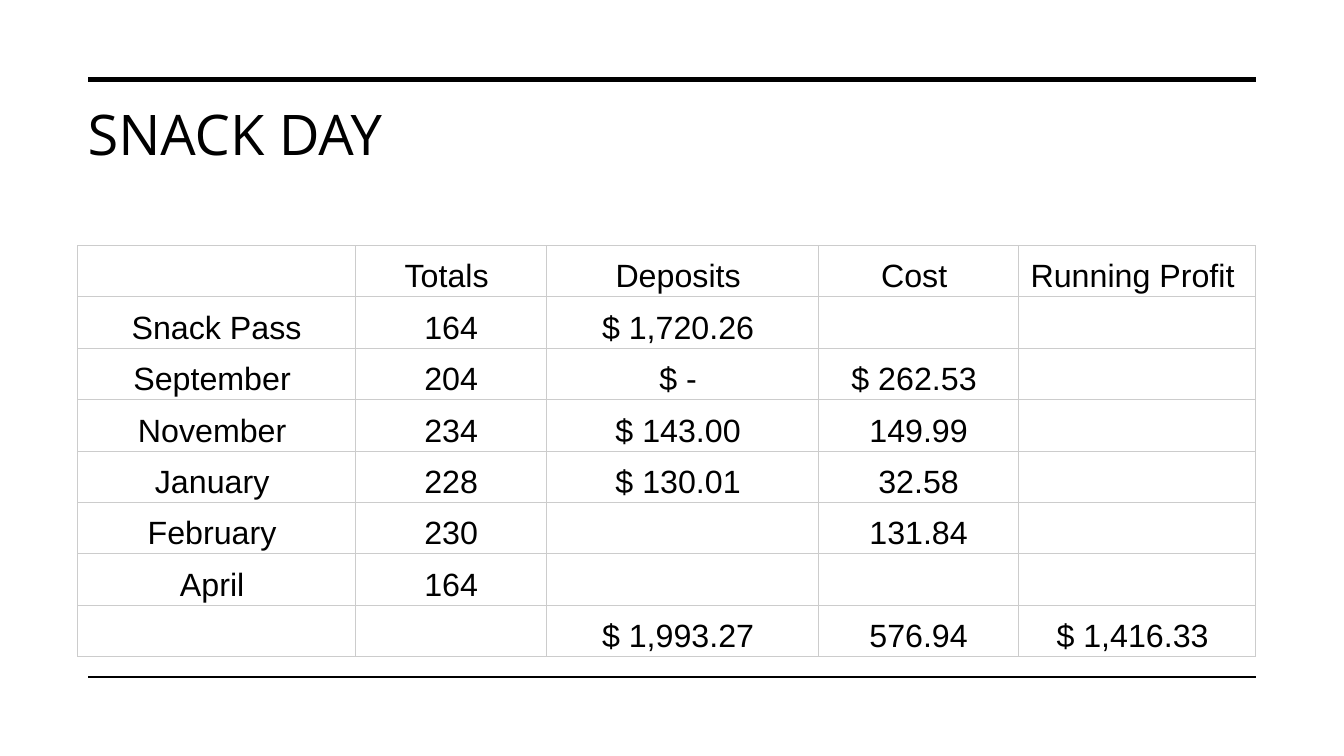
from lxml.etree import SubElement
from pptx import Presentation
from pptx.dml.color import RGBColor
from pptx.enum.shapes import MSO_CONNECTOR
from pptx.enum.text import MSO_ANCHOR, PP_ALIGN
from pptx.oxml import parse_xml
from pptx.oxml.ns import nsdecls, qn
from pptx.util import Pt


def color(hex_string):
    return RGBColor.from_string(hex_string)


def write_text(frame, text, font="Arial", size=23, fill="000000",
               align=PP_ALIGN.CENTER, spacing=1.0):
    paragraph = frame.paragraphs[0]
    paragraph.alignment = align
    paragraph.line_spacing = spacing
    run = paragraph.add_run()
    run.text = text
    run.font.name = font
    run.font.size = Pt(size)
    run.font.color.rgb = color(fill)


presentation = Presentation()
presentation.slide_width = Pt(960)
presentation.slide_height = Pt(540)
slide = presentation.slides.add_slide(presentation.slide_layouts[6])

# Title
title = slide.shapes.add_textbox(Pt(55.5), Pt(71.3), Pt(841.7), Pt(90.7))
title.text_frame.word_wrap = True
write_text(title.text_frame, "SNACK DAY", font="Open Sans", size=40,
           align=PP_ALIGN.LEFT, spacing=0.95)

# Rules above the title and below the table
for top, width in [(56.7, 3.5), (483.7, 1)]:
    rule = slide.shapes.add_connector(
        MSO_CONNECTOR.STRAIGHT, Pt(63), Pt(top), Pt(897), Pt(top))
    rule.line.color.rgb = color("000000")
    rule.line.width = Pt(width)
    SubElement(rule._element.spPr, qn("a:effectLst"))

# Snack day figures
rows = [
    ["", "Totals ", "Deposits ", "Cost ", "Running Profit "],
    ["Snack Pass", "164", "$ 1,720.26 ", "", ""],
    ["September ", "204", "$ - ", "$ 262.53 ", ""],
    ["November ", "234", "$ 143.00 ", "149.99", ""],
    ["January ", "228", "$ 130.01 ", "32.58", ""],
    ["February ", "230", "", "131.84", ""],
    ["April ", "164", "", "", ""],
    ["", "", "$ 1,993.27 ", "576.94", "$ 1,416.33 "],
]
column_widths = [198.6, 136.4, 194.4, 142.7, 169.5]
row_height = 36.7

table = slide.shapes.add_table(
    len(rows), len(column_widths), Pt(55.5), Pt(175.4),
    Pt(sum(column_widths)), Pt(row_height * len(rows))).table
table.first_row = False
table.horz_banding = False
for column, width in zip(table.columns, column_widths):
    column.width = Pt(width)

for row, texts in zip(table.rows, rows):
    row.height = Pt(row_height)
    for cell, text in zip(row.cells, texts):
        cell.vertical_anchor = MSO_ANCHOR.BOTTOM
        cell.margin_left = cell.margin_right = Pt(2.2)
        cell.margin_top = cell.margin_bottom = Pt(1.5)
        if text:
            write_text(cell.text_frame, text)
        # Borders come before the fill in the cell properties
        properties = cell._tc.get_or_add_tcPr()
        for side in ("lnL", "lnR", "lnT", "lnB"):
            properties.append(parse_xml(
                f'<a:{side} {nsdecls("a")} w="{Pt(0.75)}"><a:solidFill>'
                f'<a:srgbClr val="CCCCCC"/></a:solidFill></a:{side}>'))
        cell.fill.background()

presentation.save("out.pptx")
